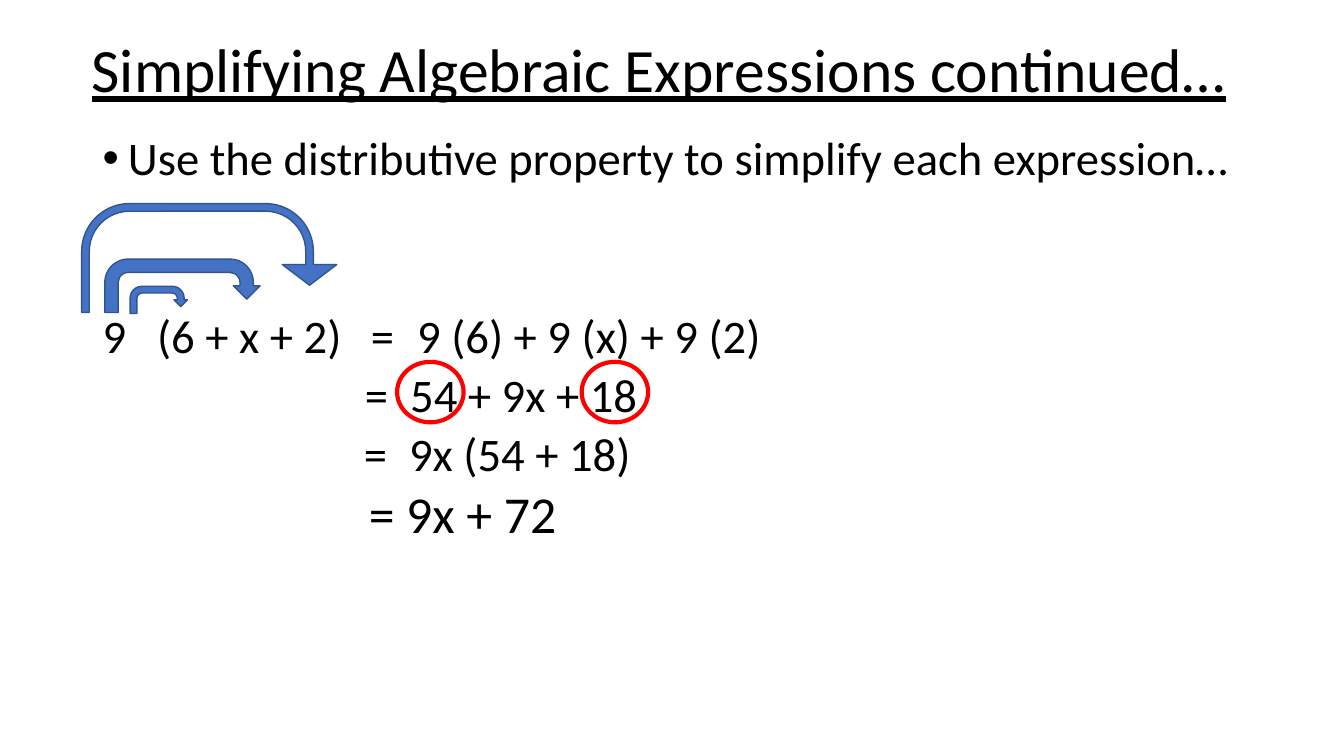
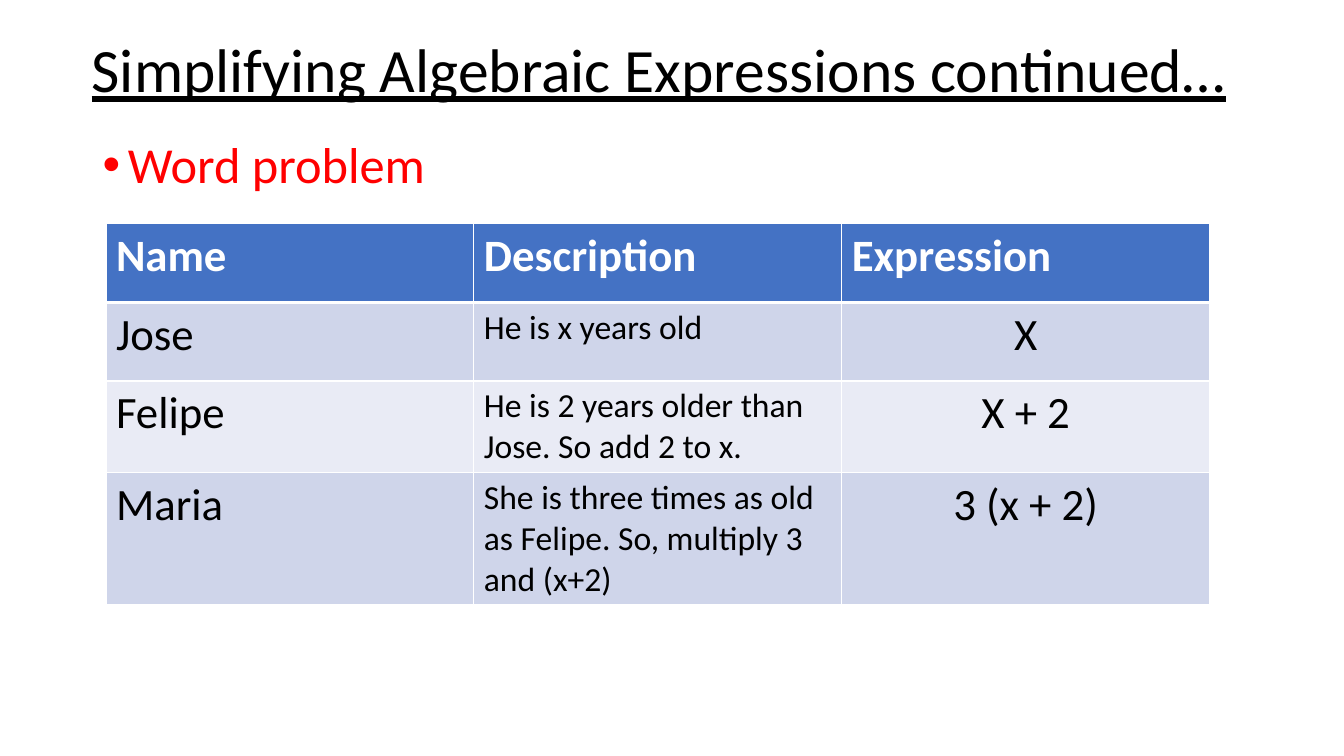
from lxml.etree import SubElement
from pptx import Presentation
from pptx.dml.color import RGBColor
from pptx.enum.shapes import MSO_SHAPE
from pptx.enum.text import MSO_ANCHOR, PP_ALIGN
from pptx.oxml.ns import qn
from pptx.util import Inches, Pt

COLORS = {
    "text": "000000",
    "accent": "FF0000",
    "blue": "4472C4",
    "outline": "325491",
    "white": "FFFFFF",
    "band_dark": "CFD5EA",
    "band_light": "E9EBF5",
}
FONT = "Calibri"
TITLE = "Simplifying Algebraic Expressions continued…"


def color(name):
    return RGBColor.from_string(COLORS[name])


class Deck:
    """Holds the style and current slide; lengths are percent of the slide's size."""

    def __init__(self):
        self.presentation = Presentation()
        self.presentation.slide_width = Inches(13.333)
        self.presentation.slide_height = Inches(7.5)
        self.slide = None

    def across(self, percent):
        return round(self.presentation.slide_width * percent / 100)

    def down(self, percent):
        return round(self.presentation.slide_height * percent / 100)

    def place(self, left, top, width, height):
        return self.across(left), self.down(top), self.across(width), self.down(height)

    def style(self, paragraph, size, color_name="text", bold=False, underline=False):
        for run in paragraph.runs:
            run.font.name = FONT
            run.font.size = Pt(size)
            run.font.bold = bold
            run.font.underline = underline
            run.font.color.rgb = color(color_name)

    def text_box(self, *box):
        text_frame = self.slide.shapes.add_textbox(*self.place(*box)).text_frame
        text_frame.word_wrap = True
        return text_frame

    def add_slide(self, title):
        self.slide = self.presentation.slides.add_slide(self.presentation.slide_layouts[6])
        text_frame = self.text_box(6.08, 0, 92.55, 19.33)
        text_frame.vertical_anchor = MSO_ANCHOR.MIDDLE
        paragraph = text_frame.paragraphs[0]
        paragraph.text = title
        paragraph.line_spacing = 0.9
        self.style(paragraph, 44, underline=True)

    def bullet(self, text, size, color_name="text", spacing=0.9):
        text_frame = self.text_box(6.9, 17.87, 86.25, 76)
        paragraph = text_frame.paragraphs[0]
        paragraph.text = text
        paragraph.line_spacing = spacing
        properties = paragraph._p.get_or_add_pPr()
        properties.set("marL", str(Inches(0.25)))
        properties.set("indent", str(-Inches(0.25)))
        SubElement(properties, qn("a:buFont"), typeface="Arial")
        SubElement(properties, qn("a:buChar"), char="•")
        self.style(paragraph, size, color_name)
        return text_frame

    def step(self, text_frame, text, size, stops, space_before=10):
        paragraph = text_frame.add_paragraph()
        paragraph.text = text
        tab_list = SubElement(paragraph._p.get_or_add_pPr(), qn("a:tabLst"))
        for stop in stops:
            SubElement(tab_list, qn("a:tab"), pos=str(self.across(stop)), algn="l")
        paragraph.line_spacing = 0.8
        paragraph.space_before = Pt(space_before)
        self.style(paragraph, size)

    def shape(self, kind, box, line, line_width, fill=None, adjustments=()):
        shape = self.slide.shapes.add_shape(kind, *self.place(*box))
        shape.shadow.inherit = False
        if fill:
            shape.fill.solid()
            shape.fill.fore_color.rgb = color(fill)
        else:
            shape.fill.background()
        shape.line.color.rgb = color(line)
        shape.line.width = Pt(line_width)
        for index, value in enumerate(adjustments):
            shape.adjustments[index] = value

    def arrow(self, box, adjustments=()):
        self.shape(MSO_SHAPE.U_TURN_ARROW, box, "outline", 1, "blue", adjustments)

    def ring(self, left):
        self.shape(MSO_SHAPE.OVAL, (left, 47.87, 4.95, 8), "accent", 3)

    def borders(self, cell, top, bottom):
        properties = cell._tc.get_or_add_tcPr()
        for side, width in (("L", 1), ("R", 1), ("T", top), ("B", bottom)):
            line = SubElement(properties, qn(f"a:ln{side}"), w=str(Pt(width)))
            fill = SubElement(line, qn("a:solidFill"))
            SubElement(fill, qn("a:srgbClr"), val=COLORS["white"])

    def table(self, left, top, width, heights, rows, sizes):
        box = self.place(left, top, width, sum(heights))
        table = self.slide.shapes.add_table(len(rows), len(sizes), *box).table
        for row_index, row in enumerate(rows):
            table.rows[row_index].height = self.down(heights[row_index])
            header = row_index == 0
            band = "blue" if header else ("band_light", "band_dark")[row_index % 2]
            for column_index, text in enumerate(row):
                cell = table.cell(row_index, column_index)
                self.borders(cell, 3 if row_index == 1 else 1, 3 if header else 1)
                cell.fill.solid()
                cell.fill.fore_color.rgb = color(band)
                paragraph = cell.text_frame.paragraphs[0]
                paragraph.text = text
                if header:
                    self.style(paragraph, 32, "white", bold=True)
                else:
                    self.style(paragraph, sizes[column_index])
                    if column_index == len(row) - 1:
                        paragraph.alignment = PP_ALIGN.CENTER


def distributive_slide(deck):
    deck.add_slide(TITLE)
    body = deck.bullet(
        "Use the distributive property to simplify each expression…", 33.3, spacing=0.8
    )
    deck.step(body, "9\t(6 + x + 2)\t=\t9 (6) + 9 (x) + 9 (2)", 33.3, (4.05, 19.95, 23.4), 95)
    deck.step(body, "\t=\t54 + 9x + 18", 33.3, (19.5, 22.88))
    deck.step(body, "\t=\t9x (54 + 18)", 33.3, (19.43, 22.8))
    deck.step(body, "\t= 9x + 72", 37, (19.8,))
    deck.arrow((9.68, 37.87, 4.28, 3.6))
    deck.arrow((6.08, 26.93, 18.98, 14.4), (0.07, 0.25, 0.19, 0.44, 0.75))
    deck.arrow((7.8, 34.27, 11.55, 7.07))
    for left in (29.55, 43.28):
        deck.ring(left)


def word_problem_slide(deck):
    deck.add_slide(TITLE)
    deck.bullet("Word problem", 36, "accent")
    rows = (
        ("Name", "Description", "Expression"),
        ("Jose", "He is x years old", "X"),
        ("Felipe", "He is 2 years older than Jose. So add 2 to x.", "X + 2"),
        ("Maria", "She is three times as old as Felipe. So, multiply 3 and (x+2)", "3 (x + 2)"),
    )
    deck.table(7.88, 29.6, 82.13, (10.4, 10.4, 12.13, 17.47), rows, (32, 24, 32))


def main():
    deck = Deck()
    distributive_slide(deck)
    word_problem_slide(deck)
    deck.presentation.save("out.pptx")


if __name__ == "__main__":
    main()
